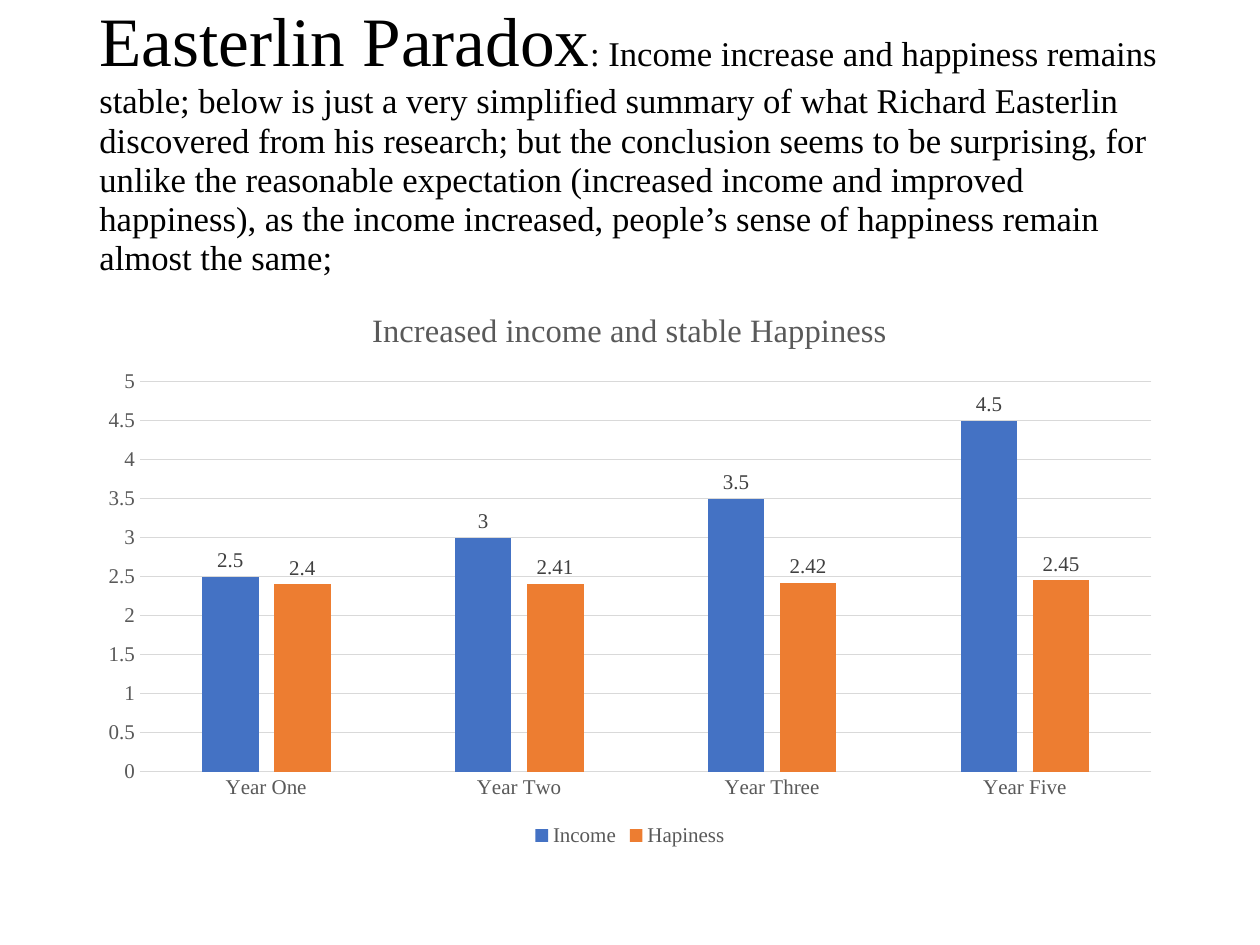
from pptx import Presentation
from pptx.chart.data import CategoryChartData as Data
from pptx.dml.color import RGBColor as Rgb
from pptx.enum.chart import XL_CHART_TYPE as Kind, XL_LABEL_POSITION as Spot
from pptx.enum.chart import XL_LEGEND_POSITION as Side, XL_TICK_MARK as Tick
from pptx.enum.text import MSO_ANCHOR as Anchor, MSO_AUTO_SIZE as Fit, PP_ALIGN as Align
from pptx.util import Cm, Pt

FACE = "Times New Roman"
GREY, PALE = "595959", "D9D9D9"
HEAD = "Easterlin Paradox"
BODY = (
    ": Income increase and happiness remains stable; below is just a very simplified "
    "summary of what Richard Easterlin discovered from his research; but the conclusion "
    "seems to be surprising, for unlike the reasonable expectation (increased income and "
    "improved happiness), as the income increased, people’s sense of happiness remain "
    "almost the same;"
)
YEARS = ["Year One", "Year Two", "Year Three", "Year Five"]
SERIES = [
    ("Income", [2.5, 3, 3.5, 4.5], "4472C4"),
    ("Hapiness", [2.4, 2.41, 2.42, 2.45], "ED7D31"),
]


def paint(color, code):
    """Set a colour from a hex string."""
    color.rgb = Rgb.from_string(code)


def style(font, size, code):
    """Give a font the slide's face, a size and a colour."""
    font.name, font.size, font.bold = FACE, Pt(size), False
    paint(font.color, code)


def rule(line):
    """Draw a thin pale line."""
    line.width = Pt(0.75)
    paint(line.color, PALE)


def add_title(slide):
    """Fill the title with its large head and smaller text."""
    title = slide.shapes.title
    title.left, title.top, title.width, title.height = Cm(1.75), Cm(1.01), Cm(21.9), Cm(3.68)
    frame = title.text_frame
    frame.word_wrap, frame.auto_size = True, Fit.NONE
    frame.vertical_anchor = Anchor.MIDDLE
    para = frame.paragraphs[0]
    para.alignment, para.line_spacing = Align.LEFT, 0.94
    for text, size in ((HEAD, 39.6), (BODY, 19.8)):
        run = para.add_run()
        run.text = text
        style(run.font, size, "000000")


def set_axes(chart):
    """Format both axes and the grid."""
    for axis in (chart.category_axis, chart.value_axis):
        axis.major_tick_mark = axis.minor_tick_mark = Tick.NONE
        style(axis.tick_labels.font, 12, GREY)
    rule(chart.category_axis.format.line)
    value = chart.value_axis
    value.format.line.fill.background()
    value.minimum_scale, value.maximum_scale, value.major_unit = 0, 5, 0.5
    rule(value.major_gridlines.format.line)


def set_bars(plot):
    """Colour and label the bars."""
    plot.gap_width, plot.overlap, plot.vary_by_categories = 219, -27, False
    for bars, (_, _, code) in zip(plot.series, SERIES):
        bars.format.fill.solid()
        paint(bars.format.fill.fore_color, code)
        labels = bars.data_labels
        labels.show_value, labels.position = True, Spot.OUTSIDE_END
        style(labels.font, 12, "404040")


def add_chart(slide):
    """Add the income and happiness column chart."""
    data = Data()
    data.categories = YEARS
    for name, vals, _ in SERIES:
        data.add_series(name, vals)
    chart = slide.shapes.add_chart(
        Kind.COLUMN_CLUSTERED, Cm(1.75), Cm(5.77), Cm(21.9), Cm(11.4), data
    ).chart
    style(chart.font, 10, "000000")
    para = chart.chart_title.text_frame.paragraphs[0]
    para.text = "Increased income and stable Happiness"
    style(para.font, 18.6, GREY)
    style(para.runs[0].font, 18.6, GREY)
    chart.chart_title.include_in_layout = False
    chart.has_legend = True
    chart.legend.position, chart.legend.include_in_layout = Side.BOTTOM, False
    style(chart.legend.font, 12, GREY)
    set_axes(chart)
    set_bars(chart.plots[0])


def main():
    """Build and save the slide."""
    deck = Presentation()
    deck.slide_width, deck.slide_height = Cm(25.4), Cm(19.05)
    slide = deck.slides.add_slide(deck.slide_layouts[5])
    add_title(slide)
    add_chart(slide)
    deck.save("out.pptx")


if __name__ == "__main__":
    main()
